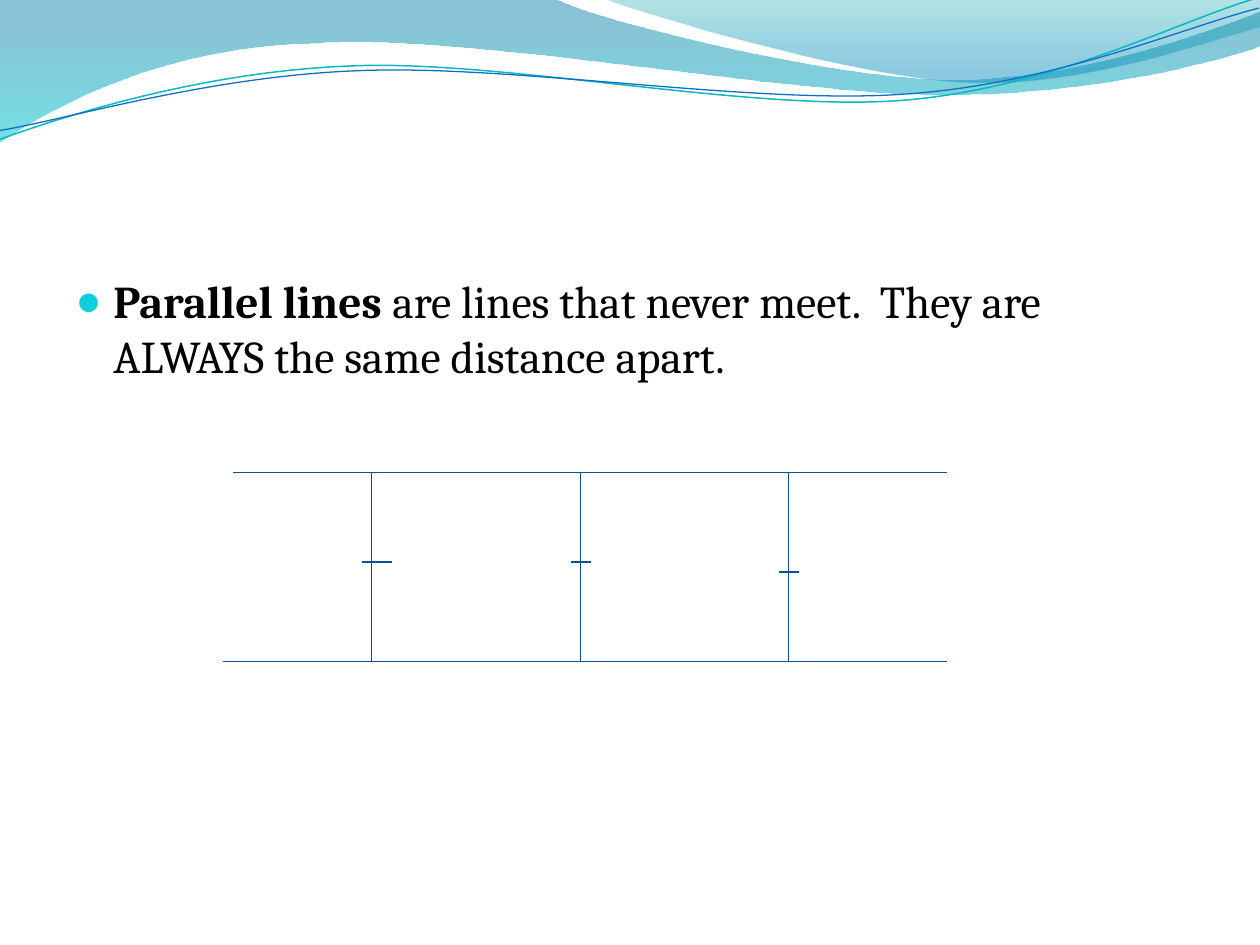
import lxml.etree
import pptx
import pptx.dml.color
import pptx.enum.shapes
import pptx.enum.text
import pptx.oxml.ns
import pptx.util

Inches = pptx.util.Inches
qn = pptx.oxml.ns.qn


def rgb(value):
    return pptx.dml.color.RGBColor.from_string(value)


def add_outline(slide, start, segments, close):
    points = [start]
    for segment in segments:
        points += zip(segment[::2], segment[1::2])
    points = [(round(x * 100), round(y * 100)) for x, y in points]
    builder = slide.shapes.build_freeform(*points[0], scale=Inches(0.01))
    builder.add_line_segments(points[1:], close=close)
    outline = builder.convert_to_shape()
    outline.shadow.inherit = False
    steps = iter(list(outline.element.iter(qn("a:lnTo"))))
    for segment in segments:
        first = next(steps)
        if len(segment) == 6:
            first.tag = qn("a:cubicBezTo")
            for step in (next(steps), next(steps)):
                first.append(step[0])
                step.getparent().remove(step)
    return outline


deck = pptx.Presentation()
deck.slide_width, deck.slide_height = Inches(10), Inches(7.5)
page = deck.slides.add_slide(deck.slide_layouts[1])
title = page.shapes.title
title.element.getparent().remove(title.element)

waves = [
    ((0, 0),
     [(4.4, -0.01), (4.76, 0.17, 6.64, 0.63, 7.58, 0.63),
      (8.53, 0.63, 9.58, 0.26, 10, 0.09), (10.01, 0.36),
      (9.83, 0.44, 8.7, 0.76, 7.46, 0.75), (6.22, 0.75, 3.82, 0.28, 2.57, 0.34),
      (1.29, 0.36, 0.46, 0.83, -0.01, 1.13)],
     [(0, "0074A1", 45), (1, "00C6CF", 55)]),
    ((4.79, -0.01),
     [(5.09, 0.11, 6.82, 0.62, 7.69, 0.65), (8.56, 0.69, 9.61, 0.32, 10, 0.21), (10, 0)],
     [(0, "00A1A9", 30), (0.8, "008BBF", 45)]),
]
for start, segments, stops in waves:
    wave = add_outline(page, start, segments, True)
    wave.line.fill.background()
    wave.fill.gradient()
    wave.fill.gradient_angle = 270
    for stop, (position, color, opacity) in zip(wave.fill.gradient_stops, stops):
        stop.position = position
        stop.color.rgb = rgb(color)
    for node, (position, color, opacity) in zip(wave.element.spPr.iter(qn("a:srgbClr")), stops):
        lxml.etree.SubElement(node, qn("a:alpha"), val=str(opacity * 1000))

ripples = [
    ((-0.02, 0.87),
     [(0.47, 0.72, 1.58, 0.41, 2.78, 0.42), (3.96, 0.42, 5.91, 0.93, 7.12, 0.9),
      (8.32, 0.87, 9.4, 0.36, 10, 0.22)], "0AB8BF", 0.85),
    ((-0.02, 0.8),
     [(0.46, 0.75, 1.64, 0.45, 2.83, 0.46), (4.04, 0.46, 5.96, 0.88, 7.16, 0.85),
      (8.35, 0.83, 9.42, 0.42, 10.01, 0.3)], "0F6FC6", 0.75),
]
for start, segments, color, width in ripples:
    ripple = add_outline(page, start, segments, False)
    ripple.rotation = 357.3
    ripple.fill.background()
    ripple.line.color.rgb = rgb(color)
    ripple.line.width = pptx.util.Pt(width)

box = page.placeholders[1]
box.left, box.top, box.width, box.height = Inches(0.5), Inches(2.12), Inches(9), Inches(4.8)
frame = box.text_frame
frame.word_wrap = True
frame.vertical_anchor = pptx.enum.text.MSO_ANCHOR.TOP
para = frame.paragraphs[0]
para.space_before = pptx.util.Pt(5.2)
para.font.name = "Cambria"
para.font.size = pptx.util.Pt(26)
para.font.color.rgb = rgb("000000")
for text, bold in [("Parallel lines ", True),
                   ("are lines that never meet.  They are ALWAYS the same distance apart.", False)]:
    span = para.add_run()
    span.text = text
    span.font.bold = bold
properties = para._p.get_or_add_pPr()
properties.set("marL", str(Inches(0.3)))
properties.set("indent", str(Inches(-0.3)))
bullet_color = lxml.etree.Element(qn("a:buClr"))
lxml.etree.SubElement(bullet_color, qn("a:srgbClr"), val="0BD0D9")
bullet_size = lxml.etree.Element(qn("a:buSzPct"), val="95000")
bullet = lxml.etree.Element(qn("a:buChar"), char="●")
for node in (bullet_color, bullet_size, bullet):
    properties.find(qn("a:defRPr")).addprevious(node)

top, bottom, right = 3.75, 5.25, 7.52
lines = [(1.85, top, right, top), (1.77, bottom, right, bottom)]
lines += [(x, top, x, bottom) for x in (2.95, 4.61, 6.26)]
lines += [(left, y, end, y) for left, end, y in
          [(2.87, 3.11, 4.46), (6.18, 6.34, 4.54), (4.53, 4.69, 4.46)]]
for ends in lines:
    line = page.shapes.add_connector(pptx.enum.shapes.MSO_CONNECTOR.STRAIGHT,
                                     *[Inches(value) for value in ends])
    line.line.color.rgb = rgb("095295")
    line.line.width = pptx.util.Pt(0.75)
    lxml.etree.SubElement(line.element.spPr, qn("a:effectLst"))

deck.save("out.pptx")
